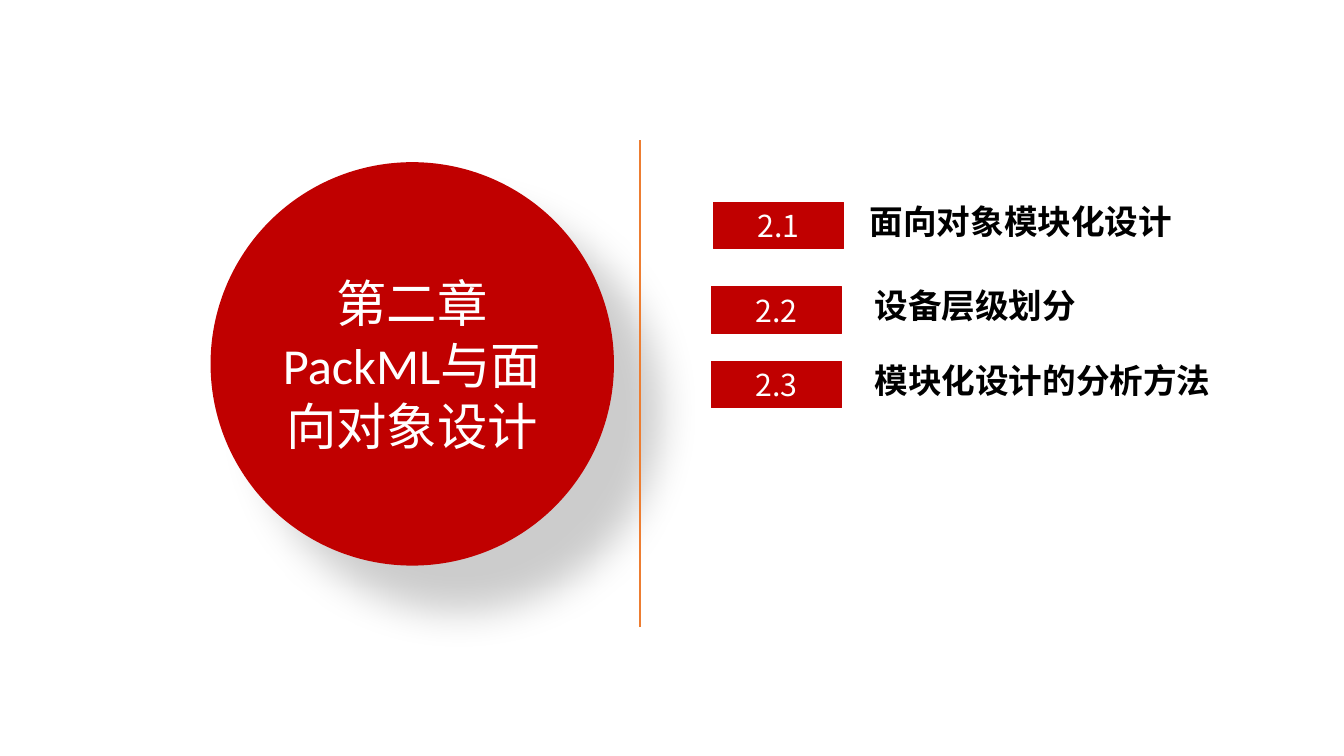
from typing import NamedTuple

from lxml import etree
from pptx import Presentation
from pptx.dml.color import RGBColor
from pptx.enum.shapes import MSO_CONNECTOR, MSO_SHAPE
from pptx.enum.text import MSO_ANCHOR, PP_ALIGN
from pptx.oxml.ns import qn
from pptx.util import Cm, Pt

OVAL, RECT = MSO_SHAPE.OVAL, MSO_SHAPE.RECTANGLE
LINE = MSO_CONNECTOR.STRAIGHT
MIDDLE = MSO_ANCHOR.MIDDLE
LEFT, CENTER = PP_ALIGN.LEFT, PP_ALIGN.CENTER

HEX = {"red": "C00000", "orange": "ED7D31", "white": "FFFFFF", "black": "000000"}
HAN, LATIN = "Noto Sans CJK SC", "Calibri"


class Box(NamedTuple):
    """Left, top, width and height in centimetres."""
    x: float
    y: float
    w: float
    h: float

    def cm(self) -> list:
        return [Cm(side) for side in self]


class Topic(NamedTuple):
    mark: str
    text: str
    top: float
    tag_x: float
    text_x: float


DISC = Box(5.36, 4.14, 10.06, 10.06)
HEAD = Box(6.83, 5.61, 7.11, 7.11)
TAG_W, TAG_H, TAG_DROP = 3.28, 1.17, 0.17
TEXT_W, TEXT_H = 10.3, 1.27
TOPICS = [
    Topic("2.1", "面向对象模块化设计", 4.93, 17.98, 21.67),
    Topic("2.2", "设备层级划分", 7.06, 17.93, 21.79),
    Topic("2.3", "模块化设计的分析方法", 8.94, 17.93, 21.79),
]


def rgb(name: str) -> RGBColor:
    return RGBColor.from_string(HEX[name])


def style(para, size: float, color: str, align, bold=False, face=HAN) -> None:
    """Format a paragraph and its runs; Chinese glyphs always use HAN."""
    para.alignment = align
    for run in para.runs:
        font = run.font
        font.size, font.bold = Pt(size), bold
        font.color.rgb = rgb(color)
        font.name = face
        latin = font._element.find(qn("a:latin"))
        east = etree.Element(qn("a:ea"), typeface=HAN)
        latin.addnext(east)


def add_red(slide, kind, box: Box, width: float):
    shape = slide.shapes.add_shape(kind, *box.cm())
    shape.shadow.inherit = False
    shape.fill.solid()
    shape.fill.fore_color.rgb = rgb("red")
    shape.line.color.rgb = rgb("red")
    shape.line.width = Pt(width)
    return shape


def cast_shade(shape) -> None:
    """Give the shape a soft shadow towards the lower right."""
    effects = shape._element.spPr.find(qn("a:effectLst"))
    shade = etree.SubElement(
        effects, qn("a:outerShdw"), blurRad=str(Pt(29)), dist=str(Pt(46)),
        dir=str(45 * 60000), algn="tl", rotWithShape="0")
    color = etree.SubElement(shade, qn("a:srgbClr"), val=HEX["black"])
    etree.SubElement(color, qn("a:alpha"), val="20000")


def add_head(slide) -> None:
    disc = add_red(slide, OVAL, DISC, 3)
    cast_shade(disc)
    title = slide.shapes.title
    title.left, title.top, title.width, title.height = HEAD.cm()
    disc._element.addnext(title._element)
    frame = title.text_frame
    frame.text = "第二章\nPackML与面向对象设计"
    frame.word_wrap = True
    frame.vertical_anchor = MIDDLE
    frame.margin_left = frame.margin_right = 0
    for para, face in zip(frame.paragraphs, (HAN, LATIN)):
        para.line_spacing = Pt(43.9)
        style(para, 36, "white", CENTER, face=face)


def add_rule(slide) -> None:
    rule = slide.shapes.add_connector(
        LINE, Cm(16.13), Cm(15.8), Cm(16.13), Cm(3.53))
    rule.line.color.rgb = rgb("orange")
    rule.line.width = Pt(1.5)
    etree.SubElement(rule._element.spPr, qn("a:effectLst"))


def add_topic(slide, topic: Topic) -> None:
    spot = Box(topic.tag_x, topic.top + TAG_DROP, TAG_W, TAG_H)
    tag = add_red(slide, RECT, spot, 0.75)
    area = Box(topic.text_x, topic.top, TEXT_W, TEXT_H)
    label = slide.shapes.add_textbox(*area.cm())
    for shape, text in ((tag, topic.mark), (label, topic.text)):
        frame = shape.text_frame
        frame.text = text
        frame.word_wrap = True
        frame.vertical_anchor = MIDDLE
    style(tag.text_frame.paragraphs[0], 21.6, "white", CENTER)
    style(label.text_frame.paragraphs[0], 24, "black", LEFT, bold=True)


def main() -> None:
    deck = Presentation()
    deck.slide_width, deck.slide_height = Cm(33.87), Cm(19.05)
    slide = deck.slides.add_slide(deck.slide_layouts.get_by_name("Title Only"))
    add_head(slide)
    add_rule(slide)
    for topic in TOPICS:
        add_topic(slide, topic)
    deck.save("out.pptx")


if __name__ == "__main__":
    main()
